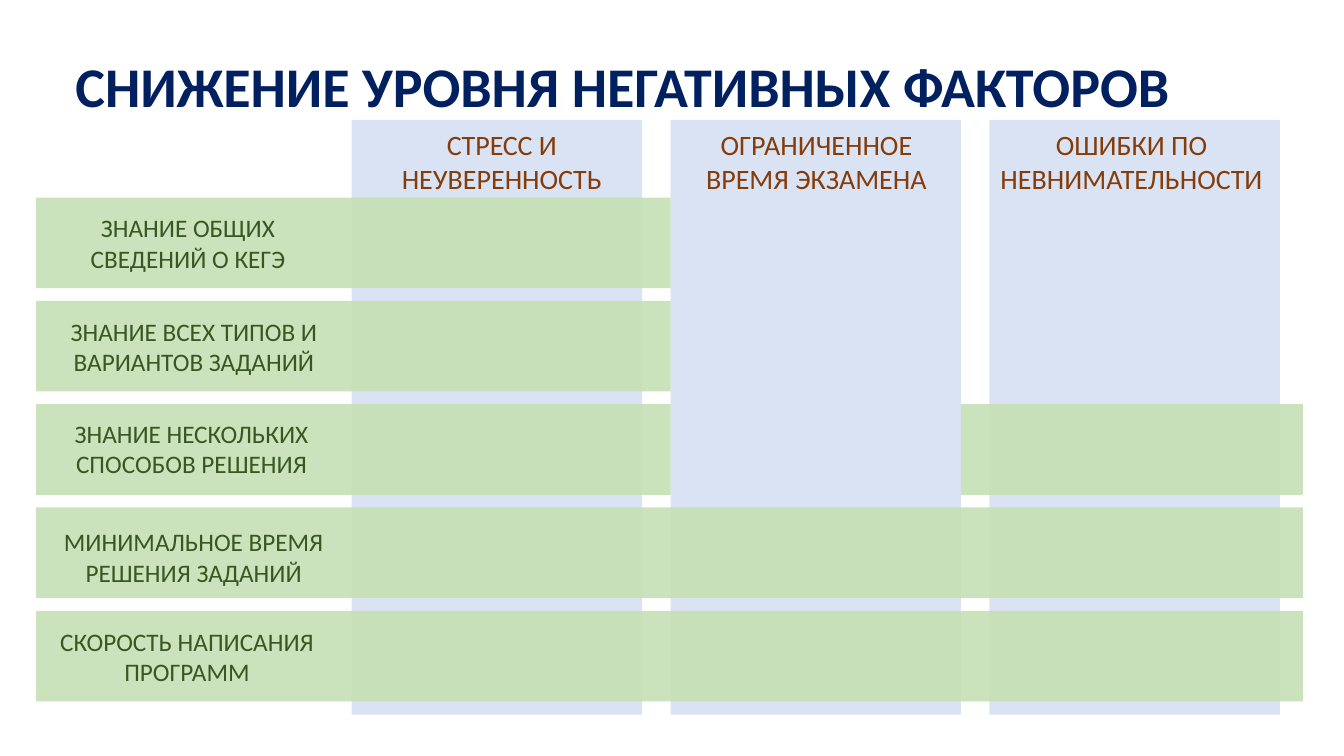
"""Slide matching exam preparation skills to the negative factors they reduce."""
from lxml.etree import SubElement
from pptx import Presentation
from pptx.dml.color import RGBColor
from pptx.enum.shapes import MSO_SHAPE
from pptx.enum.text import PP_ALIGN
from pptx.oxml.ns import qn
from pptx.util import Pt

NAVY = RGBColor(0x00, 0x20, 0x60)
BROWN = RGBColor(0x84, 0x3C, 0x0B)
DARK_GREEN = RGBColor(0x38, 0x57, 0x23)
PALE_BLUE = RGBColor(0xDA, 0xE3, 0xF3)
PALE_GREEN = RGBColor(0xC5, 0xE0, 0xB4)

COLUMN_LEFT, COLUMN_TOP, COLUMN_PITCH = 251.2, 85.7, 227.8
COLUMN_WIDTH, COLUMN_HEIGHT = 207.4, 424.8
ROW_LEFT, ROW_TOP, ROW_PITCH, ROW_HEIGHT = 25.9, 141.1, 73.8, 64.8
SHORT_END, GAP_END, FULL_END = 479, 686.4, 930.6

presentation = Presentation()
presentation.slide_width = Pt(960)
presentation.slide_height = Pt(540)
slide = presentation.slides.add_slide(presentation.slide_layouts[6])


def add_band(left, top, width, height, color, opacity=100):
    band = slide.shapes.add_shape(
        MSO_SHAPE.RECTANGLE, Pt(left), Pt(top), Pt(width), Pt(height))
    band.shadow.inherit = False
    band.line.fill.background()
    band.fill.solid()
    band.fill.fore_color.rgb = color
    if opacity < 100:
        color_element = band.fill._xPr.find(qn("a:solidFill"))[0]
        SubElement(color_element, qn("a:alpha"), val=str(opacity * 1000))


def add_label(text, left, top, width, height, size, color,
              align=PP_ALIGN.CENTER, bold=False):
    frame = slide.shapes.add_textbox(
        Pt(left), Pt(top), Pt(width), Pt(height)).text_frame
    frame.word_wrap = True
    paragraph = frame.paragraphs[0]
    paragraph.text = text
    paragraph.alignment = align
    paragraph.font.name = "Calibri"
    paragraph.font.size = Pt(size)
    paragraph.font.bold = bold
    paragraph.font.color.rgb = color


factors = [
    ("СТРЕСС И НЕУВЕРЕННОСТЬ", 264.2, 188.6),
    ("ОГРАНИЧЕННОЕ ВРЕМЯ ЭКЗАМЕНА", 479.5, 207.4),
    ("ОШИБКИ ПО НЕВНИМАТЕЛЬНОСТИ", 686.2, 244.1),
]
skills = [
    ("ЗНАНИЕ ОБЩИХ СВЕДЕНИЙ О КЕГЭ", 25.9, 216.7, 7.2,
     [(ROW_LEFT, SHORT_END)]),
    ("ЗНАНИЕ ВСЕХ ТИПОВ И ВАРИАНТОВ ЗАДАНИЙ", 30.2, 216.7, 7.2,
     [(ROW_LEFT, SHORT_END)]),
    ("ЗНАНИЕ НЕСКОЛЬКИХ СПОСОБОВ РЕШЕНИЯ", 33.1, 207.4, 6.5,
     [(ROW_LEFT, SHORT_END), (GAP_END, FULL_END)]),
    ("МИНИМАЛЬНОЕ ВРЕМЯ РЕШЕНИЯ ЗАДАНИЙ", 34.6, 207.4, 10.1,
     [(ROW_LEFT, FULL_END)]),
    ("СКОРОСТЬ НАПИСАНИЯ ПРОГРАММ", 25.9, 215.3, 7.2,
     [(ROW_LEFT, FULL_END)]),
]

add_label("СНИЖЕНИЕ УРОВНЯ НЕГАТИВНЫХ ФАКТОРОВ", 46.8, 33.1, 883.4, 55.4,
          40, NAVY, PP_ALIGN.LEFT, True)

for column, (factor, left, width) in enumerate(factors):
    add_band(COLUMN_LEFT + column * COLUMN_PITCH, COLUMN_TOP,
             COLUMN_WIDTH, COLUMN_HEIGHT, PALE_BLUE)
    add_label(factor, left, 87.8, width, 55.4, 20, BROWN)

for row, (skill, left, width, inset, spans) in enumerate(skills):
    top = ROW_TOP + row * ROW_PITCH
    for start, end in spans:
        add_band(start, top, end - start, ROW_HEIGHT, PALE_GREEN, 89)
    add_label(skill, left, top + inset, width, 51.1, 18, DARK_GREEN)

presentation.save("out.pptx")
